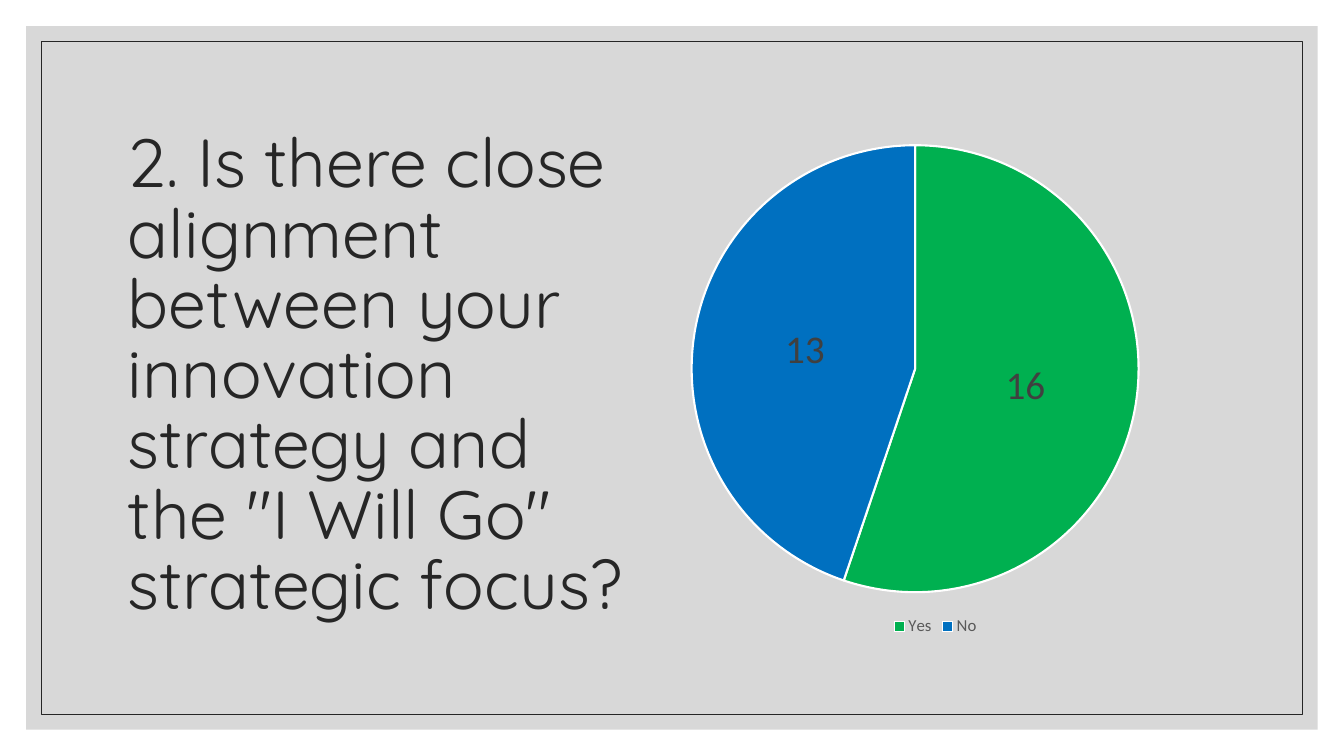
import pptx
import pptx.chart.data
import pptx.dml.color
import pptx.enum.chart
import pptx.enum.shapes
import pptx.enum.text
import pptx.oxml
import pptx.oxml.ns
import pptx.util
from lxml import etree

Cm, Pt = pptx.util.Cm, pptx.util.Pt
SLIDE_W, SLIDE_H = 33.87, 19.05
COLORS = {
    "panel": "BFBFBF",
    "ink": "262626",
    "yes": "00B050",
    "no": "0070C0",
    "border": "FFFFFF",
    "label": "404040",
    "legend": "595959",
}
ANSWERS = {"Yes": 16, "No": 13}


def rgb(name):
    return pptx.dml.color.RGBColor.from_string(COLORS[name])


def set_font(font, name, size, color):
    font.name, font.size = name, Pt(size)
    font.color.rgb = rgb(color)


def add_frame(s, margin):
    """Add a rectangle inset from every slide edge by margin in cm."""
    sp = s.shapes.add_shape(
        pptx.enum.shapes.MSO_SHAPE.RECTANGLE, Cm(margin), Cm(margin),
        Cm(SLIDE_W - 2 * margin), Cm(SLIDE_H - 2 * margin))
    sp.shadow.inherit = False
    return sp


def add_background(s):
    panel = add_frame(s, 0.66)
    panel.fill.solid()
    panel.fill.fore_color.rgb = rgb("panel")
    panel.line.fill.background()
    color = panel.element.spPr.find(".//" + pptx.oxml.ns.qn("a:srgbClr"))
    etree.SubElement(color, pptx.oxml.ns.qn("a:alpha"), val="60000")

    outline = add_frame(s, 1.04)
    outline.fill.background()
    outline.line.color.rgb = rgb("ink")
    outline.line.width = Pt(0.5)


def add_question(s, text, left, top, width, height):
    title = s.shapes.title
    title.left, title.top = Cm(left), Cm(top)
    title.width, title.height = Cm(width), Cm(height)
    title.element.getparent().append(title.element)  # in front of the frames
    tf = title.text_frame
    tf.word_wrap = True
    tf.auto_size = pptx.enum.text.MSO_AUTO_SIZE.NONE
    tf.vertical_anchor = pptx.enum.text.MSO_ANCHOR.MIDDLE
    p = tf.paragraphs[0]
    p.alignment = pptx.enum.text.PP_ALIGN.LEFT
    p.line_spacing = 0.86
    r = p.add_run()
    r.text = text
    set_font(r.font, "Quicksand", 48.6, "ink")


def set_plot_layout(chart, x, y, w, h):
    """Place the plot area, in fractions of the chart."""
    plot_area = chart.plots[0]._element.getparent()
    for old in plot_area.findall(pptx.oxml.ns.qn("c:layout")):
        plot_area.remove(old)
    layout = etree.Element(pptx.oxml.ns.qn("c:layout"))
    manual = etree.SubElement(layout, pptx.oxml.ns.qn("c:manualLayout"))
    settings = {"layoutTarget": "inner", "xMode": "edge", "yMode": "edge",
                "x": x, "y": y, "w": w, "h": h}
    for tag, val in settings.items():
        etree.SubElement(manual, pptx.oxml.ns.qn("c:" + tag), val=str(val))
    plot_area.insert(0, layout)


def add_answer_pie(s, left, top, width, height):
    data = pptx.chart.data.CategoryChartData()
    data.categories = list(ANSWERS)
    data.add_series("Series 1", list(ANSWERS.values()))
    chart = s.shapes.add_chart(
        pptx.enum.chart.XL_CHART_TYPE.PIE,
        Cm(left), Cm(top), Cm(width), Cm(height), data).chart
    chart.has_title = False
    chart.font.name, chart.font.size = "Calibri", Pt(10)
    set_plot_layout(chart, 0.08, 0.03, 0.77, 0.88)

    chart.has_legend = True
    chart.legend.position = pptx.enum.chart.XL_LEGEND_POSITION.BOTTOM
    chart.legend.include_in_layout = False
    set_font(chart.legend.font, "Calibri", 12, "legend")

    plot = chart.plots[0]
    plot.vary_by_categories = True
    for i, answer in enumerate(ANSWERS):
        fmt = plot.series[0].points[i].format
        fmt.fill.solid()
        fmt.fill.fore_color.rgb = rgb(answer.lower())
        fmt.line.color.rgb = rgb("border")
        fmt.line.width = Pt(1.5)
    plot.has_data_labels = True
    labels = plot.data_labels
    labels.show_value = True
    labels.show_percentage = False
    labels.position = pptx.enum.chart.XL_LABEL_POSITION.CENTER
    set_font(labels.font, "Calibri", 28, "label")


def main():
    prs = pptx.Presentation()
    prs.slide_width, prs.slide_height = Cm(SLIDE_W), Cm(SLIDE_H)
    s = prs.slides.add_slide(prs.slide_layouts.get_by_name("Title Only"))
    add_background(s)
    add_question(
        s, "2. Is there close alignment between your innovation strategy "
        'and the "I Will Go" strategic focus?', 2.97, 1.78, 13.31, 15.47)
    add_answer_pie(s, 16.26, 3.23, 14.63, 12.9)
    prs.save("out.pptx")


if __name__ == "__main__":
    main()
